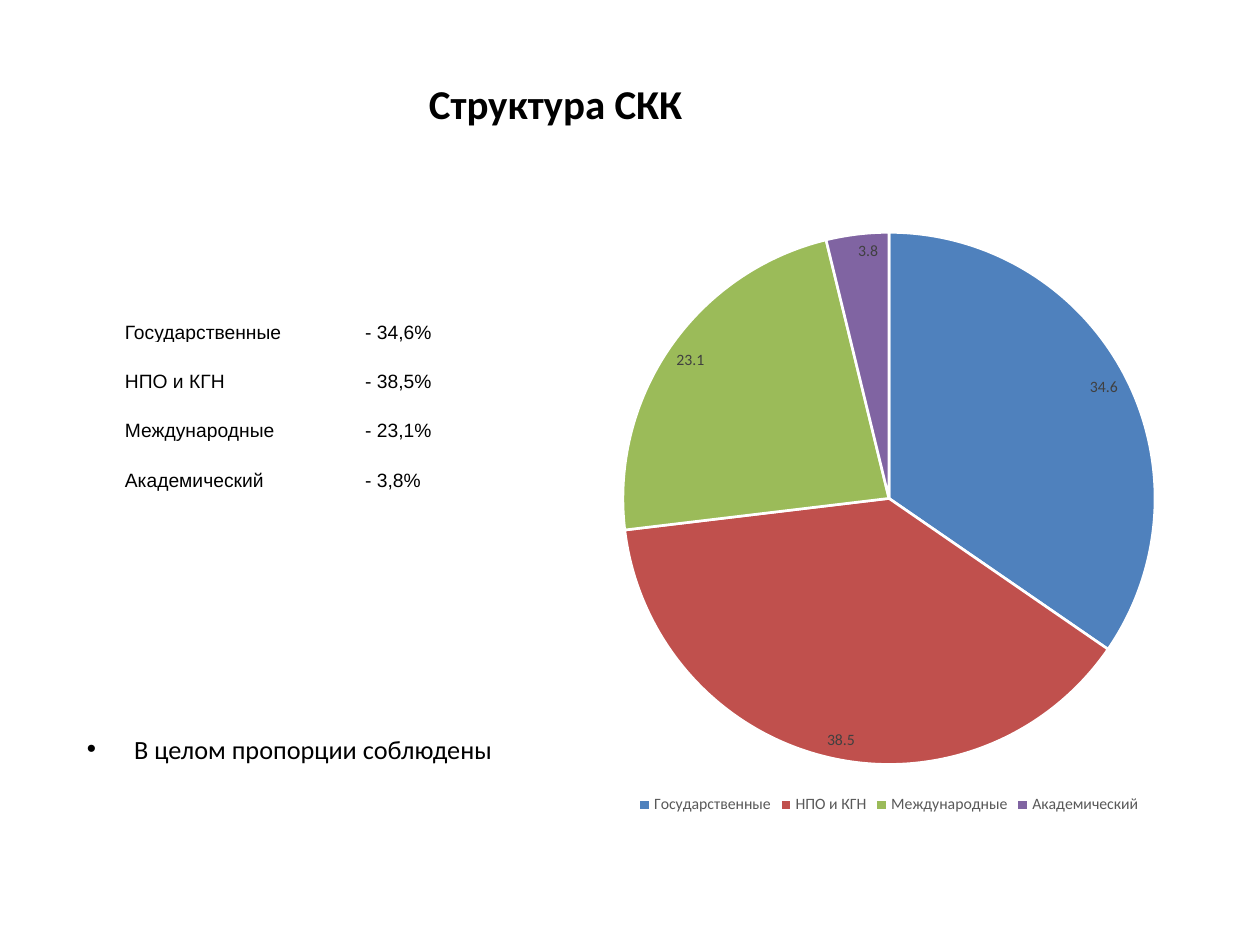
"""Build the slide on the structure of the SKK with a pie chart and a table."""
import pptx
import pptx.chart.data
import pptx.dml.color
import pptx.enum.chart
import pptx.enum.text
import pptx.oxml
import pptx.util
from lxml import etree

Pt = pptx.util.Pt
NS = "http://schemas.openxmlformats.org/drawingml/2006/main"
CHART_NS = "http://schemas.openxmlformats.org/drawingml/2006/chart"


def rgb(color):
    return pptx.dml.color.RGBColor.from_string(color)


class Deck:
    font = "Calibri"
    table_font = "Arial"
    text_color = "000000"
    label_color = "404040"
    legend_color = "595959"
    line_color = "FFFFFF"
    palette = ("4F81BD", "C0504D", "9BBB59", "8064A2")

    def __init__(self, prs):
        self.s = prs.slides.add_slide(prs.slide_layouts[1])

    def style(self, font, size, color=text_color, name=font, bold=False):
        font.name, font.size, font.bold = name, Pt(size), bold
        font.color.rgb = rgb(color)

    def place(self, sp, box, text, size, anchor, bold=False):
        sp.left, sp.top, sp.width, sp.height = map(Pt, box)
        tf = sp.text_frame
        tf.text = text
        tf.auto_size = pptx.enum.text.MSO_AUTO_SIZE.NONE
        tf.vertical_anchor = anchor
        p = tf.paragraphs[0]
        self.style(p.runs[0].font, size, bold=bold)
        return p

    def title(self, box, text):
        p = self.place(self.s.shapes.title, box, text, 23.4,
                       pptx.enum.text.MSO_ANCHOR.MIDDLE, bold=True)
        p.alignment = pptx.enum.text.PP_ALIGN.CENTER

    def body(self, box, text):
        p = self.place(self.s.placeholders[1], box, text, 15,
                       pptx.enum.text.MSO_ANCHOR.BOTTOM)
        pPr = p._p.get_or_add_pPr()
        pPr.set("marL", str(Pt(27)))
        pPr.set("indent", str(Pt(-27)))

    def pie(self, box, shares):
        data = pptx.chart.data.CategoryChartData(number_format="0.0")
        data.categories = list(shares)
        data.add_series("Series 1", list(shares.values()))
        chart = self.s.shapes.add_chart(
            pptx.enum.chart.XL_CHART_TYPE.PIE, *map(Pt, box), data).chart
        self.style(chart.font, 10)
        chart.has_title = False
        chart.has_legend = True
        chart.legend.position = pptx.enum.chart.XL_LEGEND_POSITION.BOTTOM
        chart.legend.include_in_layout = False
        self.style(chart.legend.font, 9, self.legend_color)
        plot = chart.plots[0]
        plot.vary_by_categories = True
        plot.has_data_labels = True
        labels = plot.data_labels
        labels.show_value = True
        labels.number_format, labels.number_format_is_linked = "0.0", False
        labels.position = pptx.enum.chart.XL_LABEL_POSITION.INSIDE_END
        self.style(labels.font, 9, self.label_color)
        for i, color in enumerate(self.palette):
            fmt = plot.series[0].points[i].format
            fmt.fill.solid()
            fmt.fill.fore_color.rgb = rgb(color)
            fmt.line.color.rgb = rgb(self.line_color)
            fmt.line.width = Pt(1.5)
        self.plot_layout(chart, x=0.08, y=0.03, w=0.84, h=0.88)

    def plot_layout(self, chart, **sizes):
        area = chart._chartSpace.chart.plotArea
        for old in area.findall(f"{{{CHART_NS}}}layout"):
            area.remove(old)
        parts = "".join(f'<c:{k} val="{v}"/>' for k, v in sizes.items())
        area.insert(0, pptx.oxml.parse_xml(
            f'<c:layout xmlns:c="{CHART_NS}"><c:manualLayout>'
            '<c:layoutTarget val="inner"/><c:xMode val="edge"/>'
            f'<c:yMode val="edge"/>{parts}</c:manualLayout></c:layout>'))

    def table(self, box, widths, rows):
        tbl = self.s.shapes.add_table(
            len(rows), len(widths), *map(Pt, box)).table
        tbl.first_row = tbl.horz_banding = False
        for col, width in zip(tbl.columns, widths):
            col.width = Pt(width)
        for i, row in enumerate(rows):
            for j, text in enumerate(row):
                self.cell(tbl.cell(i, j), text)

    def cell(self, cell, text):
        cell.text = text
        cell.vertical_anchor = pptx.enum.text.MSO_ANCHOR.BOTTOM
        cell.margin_left = cell.margin_right = cell.margin_top = Pt(0.75)
        cell.margin_bottom = 0
        self.style(cell.text_frame.paragraphs[0].runs[0].font, 11,
                   name=self.table_font)
        tcPr = cell._tc.get_or_add_tcPr()
        for side in ("lnL", "lnR", "lnT", "lnB"):
            ln = etree.SubElement(tcPr, f"{{{NS}}}{side}", w=str(Pt(1)))
            fill = etree.SubElement(ln, f"{{{NS}}}solidFill")
            etree.SubElement(fill, f"{{{NS}}}srgbClr", val=self.line_color)
        cell.fill.background()


def main():
    prs = pptx.Presentation()
    prs.slide_width, prs.slide_height = Pt(720), Pt(540)
    shares = {"Государственные": 34.6, "НПО и КГН": 38.5,
              "Международные": 23.1, "Академический": 3.8}
    rows = [(name, f"- {share}%".replace(".", ","))
            for name, share in shares.items()]
    deck = Deck(prs)
    deck.title((99.4, 35.3, 436.3, 47.5), "Структура СКК")
    deck.body((42.5, 161.3, 293.8, 279.3), "В целом пропорции соблюдены")
    deck.pie((326.2, 122.4, 363.6, 345.6), shares)
    deck.table((70.6, 167.8, 204, 113), (137.3, 66.7), rows)
    prs.save("out.pptx")


if __name__ == "__main__":
    main()
